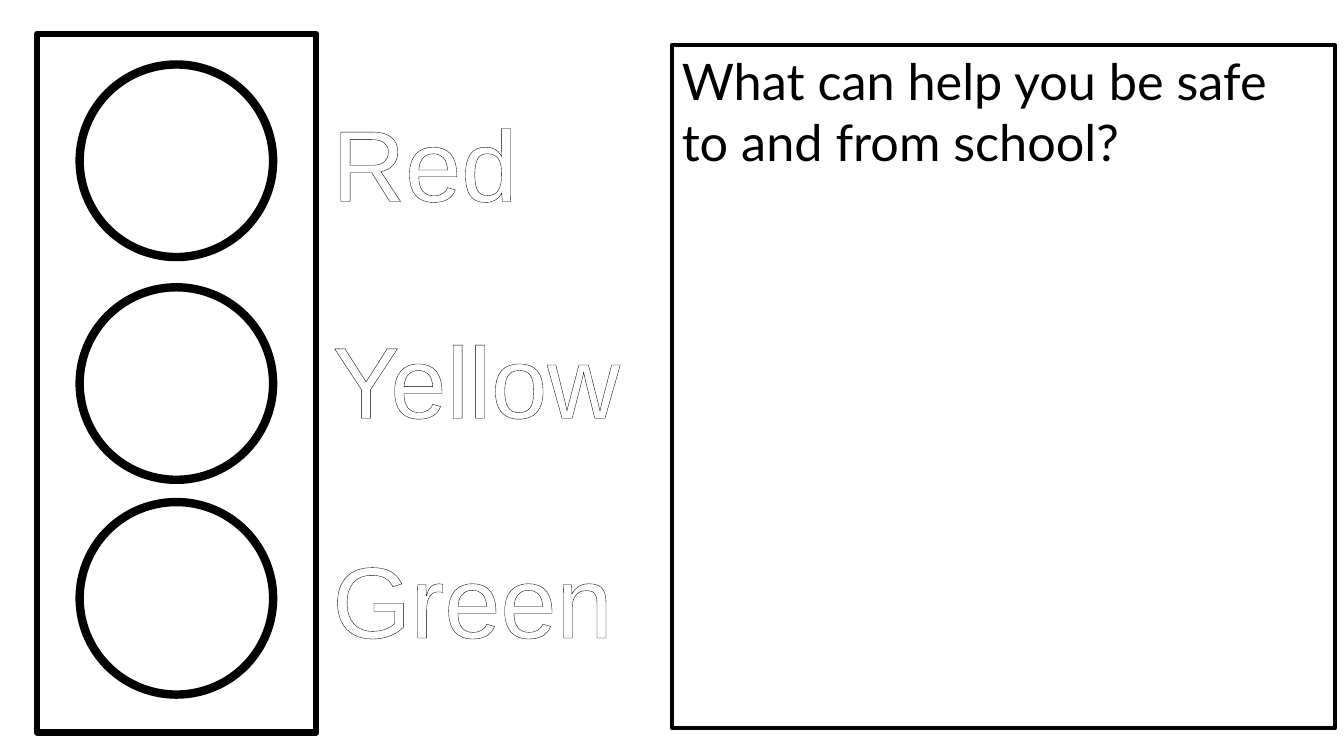
from lxml import etree
from pptx import Presentation
from pptx.dml.color import RGBColor
from pptx.enum import shapes, text
from pptx.oxml import ns
from pptx.util import Pt

COLORS = {"ink": "000000", "paper": "FFFFFF"}
rgb = {name: RGBColor.from_string(value) for name, value in COLORS.items()}

prs = Presentation()
prs.slide_width, prs.slide_height = Pt(960), Pt(540)
s = prs.slides.add_slide(prs.slide_layouts[6])


def add_outlined(kind, left, top, width, height, line_width):
    """Add a white shape with a black outline."""
    sp = s.shapes.add_shape(kind, Pt(left), Pt(top), Pt(width), Pt(height))
    sp.shadow.inherit = False
    sp.fill.solid()
    sp.fill.fore_color.rgb = rgb["paper"]
    sp.line.color.rgb = rgb["ink"]
    sp.line.width = Pt(line_width)
    return sp


def write(sp, wording, font, size, color, outline):
    """Set top-left text whose letters have a black outline."""
    tf = sp.text_frame
    frame = {"word_wrap": True, "vertical_anchor": text.MSO_ANCHOR.TOP,
             "auto_size": text.MSO_AUTO_SIZE.SHAPE_TO_FIT_TEXT}
    for name, value in frame.items():
        setattr(tf, name, value)
    p = tf.paragraphs[0]
    p.alignment = text.PP_ALIGN.LEFT
    r = p.add_run()
    r.text = wording
    r.font.name, r.font.size = font, Pt(size)
    r.font.color.rgb = rgb[color]
    ln = etree.Element(ns.qn("a:ln"), w=str(Pt(outline)))
    fill = etree.SubElement(ln, ns.qn("a:solidFill"))
    etree.SubElement(fill, ns.qn("a:srgbClr"), val=COLORS["ink"])
    r.font._element.insert(0, ln)


# Traffic light: housing, then one lamp and one label per signal
add_outlined(shapes.MSO_SHAPE.RECTANGLE, 26.5, 24.3, 199.5, 499, 4.5)
signals = [
    ("Red", 46.1, 68.4, 163),
    ("Yellow", 205.2, 223.2, 268),
    ("Green", 358.6, 380.2, 229),
]
for label, lamp_top, label_top, label_width in signals:
    add_outlined(shapes.MSO_SHAPE.OVAL, 56.9, lamp_top, 138.2, 137.5, 6)
    box = s.shapes.add_textbox(Pt(230.4), Pt(label_top), Pt(label_width), Pt(94.5))
    write(box, label, "Arial", 72, "paper", 0.75)

answer_box = add_outlined(shapes.MSO_SHAPE.RECTANGLE, 479.9, 32.4, 473.8, 487.4, 3)
write(answer_box, "What can help you be safe to and from school?", "Lato", 36, "ink", 1.5)

prs.save("out.pptx")
